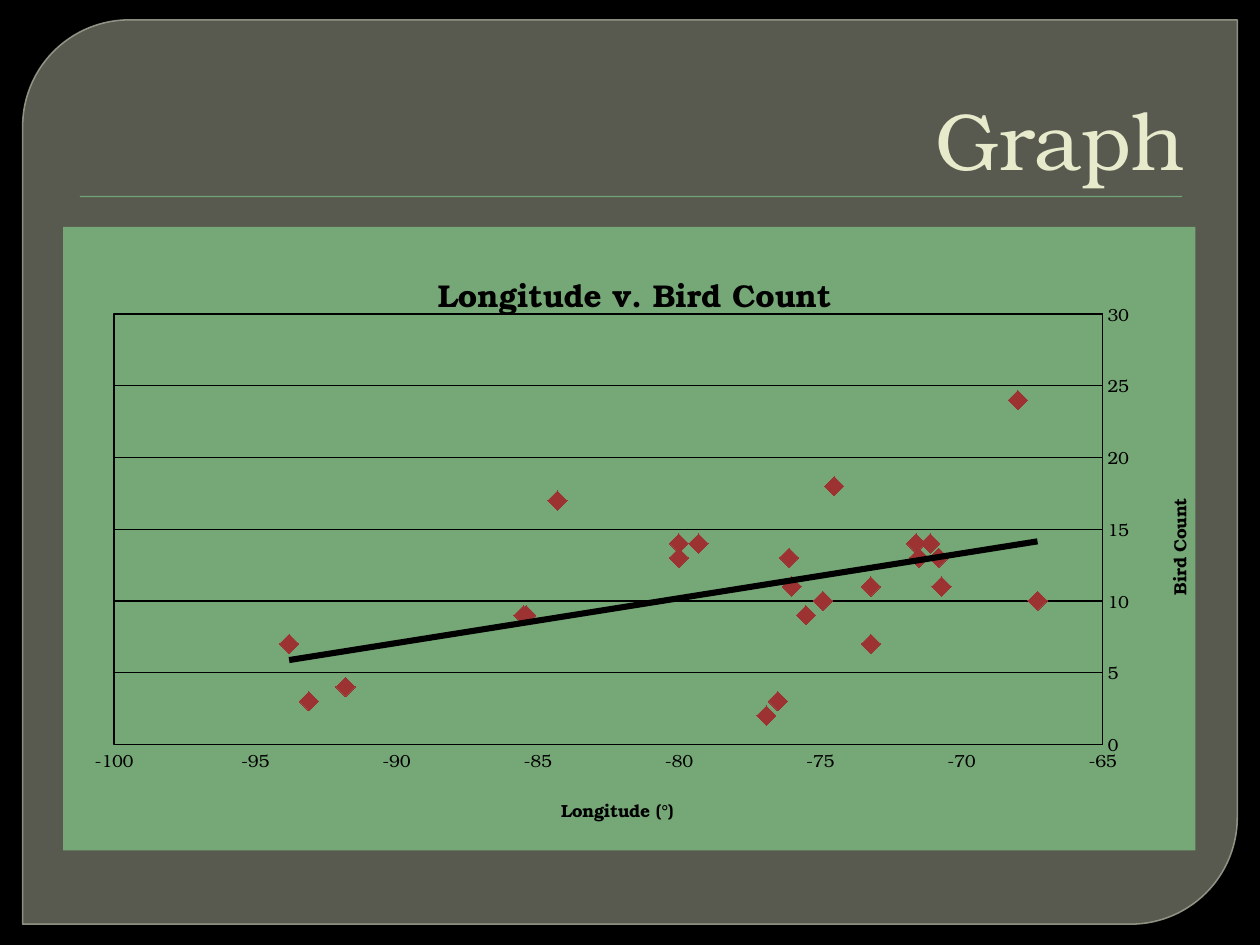
from lxml.etree import SubElement
from pptx import Presentation
from pptx.chart.data import XyChartData
from pptx.dml.color import RGBColor
from pptx.enum.chart import XL_AXIS_CROSSES, XL_CHART_TYPE, XL_MARKER_STYLE, XL_TICK_MARK
from pptx.enum.shapes import MSO_SHAPE
from pptx.enum.text import MSO_ANCHOR, PP_ALIGN
from pptx.oxml import parse_xml
from pptx.oxml.ns import nsdecls, qn
from pptx.util import Inches, Pt

FONT = "TeX Gyre Bonum"
COLORS = {"background": "000000", "panel": "888B7B", "panel_edge": "9DA090",
          "rule": "72A376", "heading": "E7EACB", "chart": "76A776",
          "ink": "000000", "point": "9D3232"}
WIDTH, HEIGHT = Inches(10), Inches(7.5)

# (longitude, bird count)
SIGHTINGS = [(-93.1, 3), (-76.1, 13), (-70.7, 11), (-76, 11), (-79.3, 14),
             (-73.2, 11), (-71.5, 13), (-70.8, 13), (-71.1, 14), (-73.2, 7),
             (-85.5, 9), (-74.5, 18), (-68, 24), (-93.8, 7), (-80, 13),
             (-67.3, 10), (-84.3, 17), (-76.9, 2), (-76.5, 3), (-80, 14),
             (-75.5, 9), (-71.6, 14), (-85.4, 9), (-74.9, 10), (-91.8, 4)]


def rgb(name):
    return RGBColor.from_string(COLORS[name])


def share(left, top, width, height):
    """Turn shares of the slide into a box in EMU."""
    return (round(left * WIDTH), round(top * HEIGHT),
            round(width * WIDTH), round(height * HEIGHT))


def write(frame, text, *, size, color, bold=False, align=None):
    paragraph = frame.paragraphs[0]
    if align is not None:
        paragraph.alignment = align
    run = paragraph.add_run()
    run.text = text
    font = run.font
    font.name, font.size, font.bold = FONT, Pt(size), bold
    font.color.rgb = rgb(color)


def set_line(line, color, width):
    line.color.rgb = rgb(color)
    line.width = Pt(width)


def set_alpha(color_format_parent, percent):
    for color in color_format_parent.iter(qn("a:srgbClr")):
        SubElement(color, qn("a:alpha")).set("val", str(percent * 1000))


def line_xml(color, width):
    return (f'<c:spPr {nsdecls("c", "a")}><a:ln w="{Pt(width)}"><a:solidFill>'
            f'<a:srgbClr val="{COLORS[color]}"/></a:solidFill></a:ln></c:spPr>')


def place(part, **shares):
    """Fix a chart part at shares of the chart's size."""
    for old in part.findall(qn("c:layout")):
        part.remove(old)
    target = '<c:layoutTarget val="inner"/>' if "w" in shares else ""
    modes = "".join(f'<c:{axis}Mode val="edge"/>' for axis in "xy")
    values = "".join(f'<c:{key} val="{value}"/>' for key, value in shares.items())
    layout = parse_xml(f'<c:layout {nsdecls("c")}><c:manualLayout>{target}{modes}'
                       f'{values}</c:manualLayout></c:layout>')
    text = part.find(qn("c:tx"))
    part.insert(0 if text is None else 1, layout)


def add_panel(slide, box):
    panel = slide.shapes.add_shape(MSO_SHAPE.ROUND_2_DIAG_RECTANGLE, *box)
    panel.adjustments[0], panel.adjustments[1] = 0.118, 0
    panel.shadow.inherit = False
    panel.fill.solid()
    panel.fill.fore_color.rgb = rgb("panel")
    set_line(panel.line, "panel_edge", 0.87)
    properties = panel._element.spPr
    set_alpha(properties.find(qn("a:solidFill")), 65)
    set_alpha(properties.find(qn("a:ln")), 88)


def add_heading(slide, box, text):
    """Right-aligned heading with a thin rule just below its box."""
    left, top, width, height = box
    rule = slide.shapes.add_shape(
        MSO_SHAPE.RECTANGLE, left + round(0.015 * width), top + round(1.02 * height),
        round(0.972 * width), Inches(0.01))
    rule.shadow.inherit = False
    rule.fill.solid()
    rule.fill.fore_color.rgb = rgb("rule")
    rule.line.fill.background()
    frame = slide.shapes.add_textbox(*box).text_frame
    frame.word_wrap = True
    frame.vertical_anchor = MSO_ANCHOR.BOTTOM
    write(frame, text, size=46, color="heading", align=PP_ALIGN.RIGHT)


def style_axis(axis, title, low, high, x, y):
    axis.minimum_scale, axis.maximum_scale, axis.major_unit = low, high, 5
    axis.major_tick_mark = axis.minor_tick_mark = XL_TICK_MARK.NONE
    axis.tick_labels.font.size = Pt(10)
    axis.tick_labels.font.color.rgb = rgb("ink")
    axis.tick_labels.number_format = "General"
    axis.tick_labels.number_format_is_linked = False
    set_line(axis.format.line, "ink", 0.75)
    write(axis.axis_title.text_frame, title, size=10, color="ink", bold=True)
    place(axis.axis_title._element, x=x, y=y)


def style_points(series):
    series.format.line.fill.background()
    marker = series.marker
    marker.style, marker.size = XL_MARKER_STYLE.DIAMOND, 11
    marker.format.fill.solid()
    marker.format.fill.fore_color.rgb = rgb("point")
    marker.format.line.fill.background()
    trend = parse_xml(f'<c:trendline {nsdecls("c")}>{line_xml("ink", 3.5)}'
                      '<c:trendlineType val="linear"/><c:dispRSqr val="0"/>'
                      '<c:dispEq val="0"/></c:trendline>')
    series._element.find(qn("c:xVal")).addprevious(trend)


def add_scatter(slide, box):
    data = XyChartData()
    sightings = data.add_series("Series 1")
    for longitude, count in SIGHTINGS:
        sightings.add_data_point(longitude, count)
    chart = slide.shapes.add_chart(XL_CHART_TYPE.XY_SCATTER, *box, data).chart
    chart.has_legend = False
    chart.font.name, chart.font.size = FONT, Pt(10)
    chart.plots[0].vary_by_categories = False
    write(chart.chart_title.text_frame, "Longitude v. Bird Count",
          size=18, color="ink", bold=True)
    place(chart.chart_title._element, x=0.326, y=0.056)

    longitude_axis, count_axis = chart.category_axis, chart.value_axis
    style_axis(longitude_axis, "Longitude (°)", -100, -65, x=0.437, y=0.907)
    style_axis(count_axis, "Bird Count", 0, 30, x=0.97, y=0.43)
    longitude_axis.has_major_gridlines = False
    longitude_axis.crosses = XL_AXIS_CROSSES.MAXIMUM
    count_axis.has_major_gridlines = True
    set_line(count_axis.major_gridlines.format.line, "ink", 0.75)
    style_points(chart.plots[0].series[0])

    chart_root = chart._chartSpace
    plot_area = chart_root.find(qn("c:chart")).find(qn("c:plotArea"))
    place(plot_area, x=0.045, y=0.14, w=0.873, h=0.69)
    plot_area.append(parse_xml(line_xml("ink", 0.75)))
    chart_root.find(qn("c:chart")).addnext(parse_xml(
        f'<c:spPr {nsdecls("c", "a")}><a:solidFill><a:srgbClr val="{COLORS["chart"]}"/>'
        '</a:solidFill><a:ln><a:noFill/></a:ln></c:spPr>'))


def main():
    deck = Presentation()
    deck.slide_width, deck.slide_height = WIDTH, HEIGHT
    slide = deck.slides.add_slide(deck.slide_layouts[6])
    slide.background.fill.solid()
    slide.background.fill.fore_color.rgb = rgb("background")
    add_panel(slide, share(0.018, 0.021, 0.964, 0.957))
    add_heading(slide, share(0.05, 0.037, 0.9, 0.167), "Graph")
    add_scatter(slide, share(0.05, 0.24, 0.9, 0.66))
    deck.save("out.pptx")


if __name__ == "__main__":
    main()
